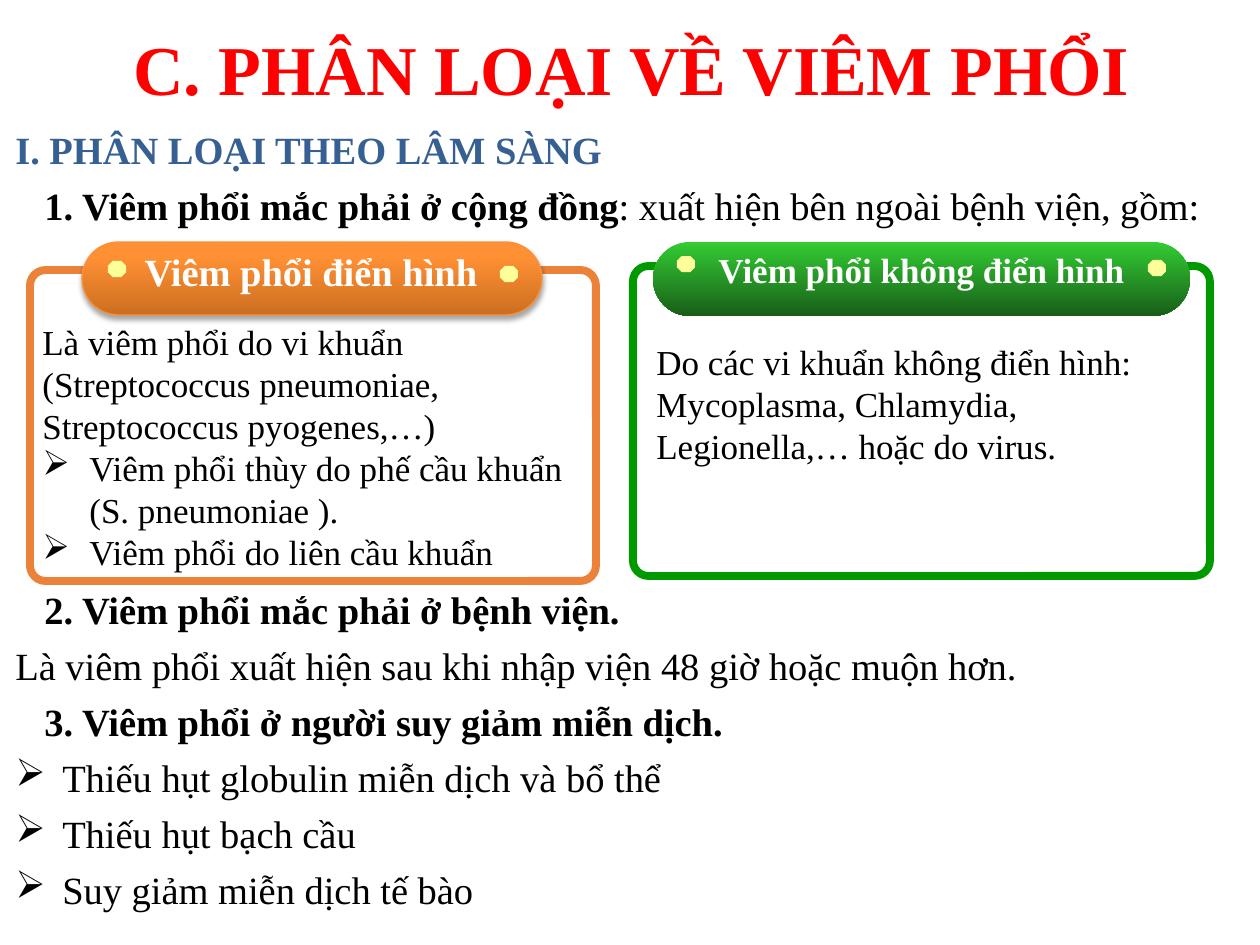
import lxml.etree
import pptx
import pptx.dml.color
import pptx.enum.shapes
import pptx.enum.text
import pptx.oxml.ns
import pptx.util

SHAPE = pptx.enum.shapes.MSO_SHAPE
ALIGN = pptx.enum.text.PP_ALIGN
ANCHOR = pptx.enum.text.MSO_ANCHOR

THEME = {
    "font": "Times New Roman",
    "title": "FF0000", "section": "376092", "text": "000000",
    "on_header": "FFFFFF", "dot": "FFFF99",
    "title_size": 40, "body_size": 22, "card_size": 20,
    "frame_width": 4.5,
}

# Content: a paragraph is (kind, [(text, bold), ...])
TITLE = "C. PHÂN LOẠI VỀ VIÊM PHỔI"
OUTLINE = [
    ((3, 120, 1257, 114), [
        ("section", [("I. PHÂN LOẠI THEO LÂM SÀNG", True)]),
        ("item", [("1. Viêm phổi mắc phải ở cộng đồng", True),
                  (": xuất hiện bên ngoài bệnh viện, gồm:", False)]),
    ]),
    ((3, 580, 1257, 340), [
        ("item", [("2. Viêm phổi mắc phải ở bệnh viện.", True)]),
        ("plain", [("Là viêm phổi xuất hiện sau khi nhập viện 48 giờ hoặc muộn hơn.", False)]),
        ("item", [("3. Viêm phổi ở người suy giảm miễn dịch.", True)]),
        ("bullet", [("Thiếu hụt globulin miễn dịch và bổ thể", False)]),
        ("bullet", [("Thiếu hụt bạch cầu", False)]),
        ("bullet", [("Suy giảm miễn dịch tế bào", False)]),
    ]),
]
CARDS = [
    {"header": "Viêm phổi điển hình", "header_size": 22,
     "header_box": (129, 242, 364, 48),
     "frame": (30, 270, 566, 311), "pill": (82, 242, 460, 73),
     "dots": [(108, 261), (500, 266)], "body_box": (30, 314, 566, 255),
     "frame_color": "EC823A", "gradient": [(0.2, "FF9034"), (1, "CC6E20")],
     "pill_line": "F69240", "shadow": True,
     "body": [
         ("plain", [("Là viêm phổi do vi khuẩn (Streptococcus pneumoniae, "
                     "Streptococcus pyogenes,…)", False)]),
         ("bullet", [("Viêm phổi thùy do phế cầu khuẩn (S. pneumoniae ).", False)]),
         ("bullet", [("Viêm phổi do liên cầu khuẩn", False)]),
     ]},
    {"header": "Viêm phổi không điển hình", "header_size": 20,
     "header_box": (653, 242, 537, 52),
     "frame": (633, 266, 577, 310), "pill": (653, 242, 537, 74),
     "dots": [(677, 256), (1148, 260)], "body_box": (644, 334, 566, 190),
     "frame_color": "009900", "gradient": [(0, "33CC33"), (1, "185E18")],
     "pill_line": None, "shadow": False,
     "body": [
         ("plain", [("Do các vi khuẩn không điển hình: Mycoplasma, Chlamydia, "
                     "Legionella,… hoặc do virus.", False)]),
     ]},
]
DOT_SIZE = (18, 16)
ITEM_INDENT = 29
BULLET_INDENT = 47


def px(length):
    return pptx.util.Emu(round(length * 914400 / 126))


def rgb(color):
    return pptx.dml.color.RGBColor.from_string(color)


def add_text(slide, box, paragraphs, size, color="text", align=ALIGN.LEFT,
             gap=0, anchor=ANCHOR.TOP, leading=None):
    frame = slide.shapes.add_textbox(*map(px, box)).text_frame
    frame.word_wrap = True
    frame.vertical_anchor = anchor
    for index, (kind, runs) in enumerate(paragraphs):
        paragraph = frame.paragraphs[0] if index == 0 else frame.add_paragraph()
        paragraph.alignment = align
        paragraph.space_before = pptx.util.Pt(gap if index else 0)
        if leading:
            paragraph.line_spacing = pptx.util.Pt(leading)
        properties = paragraph._p.get_or_add_pPr()
        if kind == "item":
            properties.set("marL", str(px(ITEM_INDENT)))
        elif kind == "bullet":
            properties.set("marL", str(px(BULLET_INDENT)))
            properties.set("indent", str(-px(BULLET_INDENT)))
            mark = lxml.etree.SubElement(properties, pptx.oxml.ns.qn("a:buChar"))
            mark.set("char", "➢")
        for words, bold in runs:
            run = paragraph.add_run()
            run.text = words
            run.font.name = THEME["font"]
            run.font.size = pptx.util.Pt(size)
            run.font.bold = bold
            run.font.color.rgb = rgb(THEME["section" if kind == "section" else color])


def add_shape(slide, preset, box, adjustment, line=None, line_width=0.75):
    shape = slide.shapes.add_shape(preset, *map(px, box))
    shape.adjustments[0] = adjustment
    shape.shadow.inherit = False
    shape.fill.background()
    if line:
        shape.line.color.rgb = rgb(line)
        shape.line.width = pptx.util.Pt(line_width)
    else:
        shape.line.fill.background()
    return shape


def add_drop_shadow(shape):
    effects = shape._element.spPr.find(pptx.oxml.ns.qn("a:effectLst"))
    shadow = lxml.etree.SubElement(
        effects, pptx.oxml.ns.qn("a:outerShdw"), blurRad=str(pptx.util.Pt(3.1)),
        dist=str(pptx.util.Pt(1.8)), dir="5400000", rotWithShape="0")
    tint = lxml.etree.SubElement(shadow, pptx.oxml.ns.qn("a:srgbClr"), val=THEME["text"])
    lxml.etree.SubElement(tint, pptx.oxml.ns.qn("a:alpha"), val="35000")


def add_card(slide, card):
    add_shape(slide, SHAPE.ROUNDED_RECTANGLE, card["frame"], 0.05,
              card["frame_color"], THEME["frame_width"])
    # Header pill, shaded from top to bottom
    pill = add_shape(slide, SHAPE.ROUNDED_RECTANGLE, card["pill"], 0.5, card["pill_line"])
    pill.fill.gradient()
    pill.fill.gradient_angle = 270
    for stop, (position, color) in zip(pill.fill.gradient_stops, card["gradient"]):
        stop.position = position
        stop.color.rgb = rgb(color)
    if card["shadow"]:
        add_drop_shadow(pill)
    for corner in card["dots"]:
        dot = add_shape(slide, SHAPE.OCTAGON, corner + DOT_SIZE, 0.29)
        dot.fill.solid()
        dot.fill.fore_color.rgb = rgb(THEME["dot"])
    # Header and body text
    add_text(slide, card["header_box"], [("plain", [(card["header"], True)])],
             card["header_size"], "on_header", ALIGN.CENTER)
    add_text(slide, card["body_box"], card["body"], THEME["card_size"])


def main():
    deck = pptx.Presentation()
    deck.slide_width, deck.slide_height = px(1260), px(945)
    slide = deck.slides.add_slide(deck.slide_layouts[6])
    # Title and outline
    add_text(slide, (26, 32, 1211, 84), [("plain", [(TITLE, True)])],
             THEME["title_size"], "title", ALIGN.CENTER,
             anchor=ANCHOR.BOTTOM, leading=58)
    for box, paragraphs in OUTLINE:
        add_text(slide, box, paragraphs, THEME["body_size"], gap=5.6)
    # Two cards for community-acquired pneumonia
    for card in CARDS:
        add_card(slide, card)
    deck.save("out.pptx")


if __name__ == "__main__":
    main()
